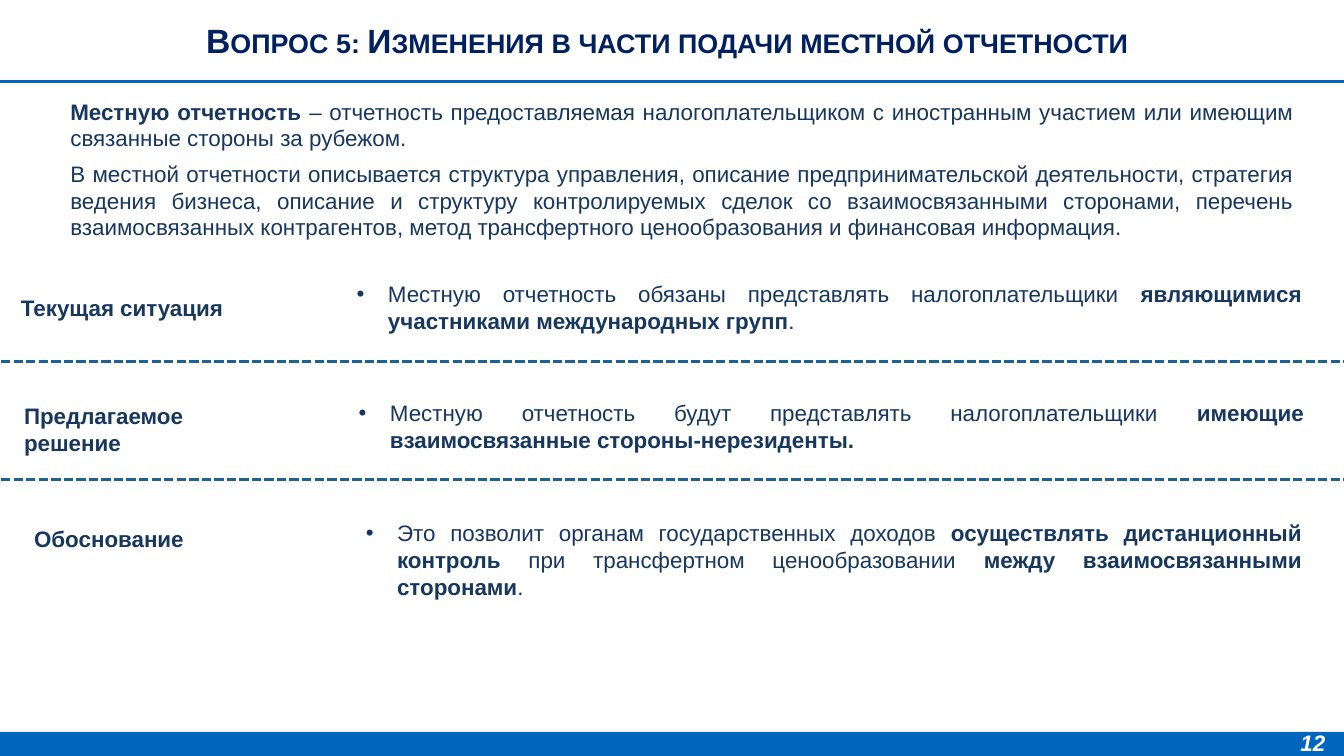
from lxml import etree
from pptx import Presentation
from pptx.dml.color import RGBColor
from pptx.enum.dml import MSO_LINE
from pptx.enum.shapes import MSO_CONNECTOR, MSO_SHAPE
from pptx.enum.text import MSO_ANCHOR, MSO_AUTO_SIZE, PP_ALIGN
from pptx.oxml.ns import qn
from pptx.util import Inches, Pt

BLUE, DASH_BLUE, NAVY, TEXT, WHITE = "0065BD", "1D6294", "002060", "17375E", "FFFFFF"

TITLE = "**Вопрос 5: Изменения в части подачи местной отчетности **"
DEFINITION = [
    "**Местную отчетность **– отчетность предоставляемая налогоплательщиком с иностранным "
    "участием или имеющим связанные стороны за рубежом. ",
    "В местной отчетности описывается структура управления, описание предпринимательской "
    "деятельности, стратегия ведения бизнеса, описание и структуру контролируемых сделок со "
    "взаимосвязанными сторонами, перечень взаимосвязанных контрагентов, метод трансфертного "
    "ценообразования и финансовая информация.",
]
SECTIONS = [
    ("Текущая ситуация", (0.11, 2.87, 2.67, 0.37),
     "Местную отчетность обязаны представлять налогоплательщики** являющимися участниками "
     "международных групп**.", (3.44, 2.73, 9.57, 0.64), 6),
    ("Предлагаемое решение", (0.14, 3.94, 2.67, 0.64),
     "Местную отчетность будут представлять налогоплательщики** имеющие взаимосвязанные "
     "стороны-нерезиденты.**", (3.46, 3.91, 9.57, 0.64), 0),
    ("Обоснование", (0.24, 5.16, 1.96, 0.37),
     "Это позволит органам государственных доходов **осуществлять дистанционный контроль** при "
     "трансфертном ценообразовании **между взаимосвязанными сторонами**.",
     (3.53, 5.1, 9.48, 1.26), 6),
]


def rgb(color):
    """Turn a hex string into a colour."""
    return RGBColor.from_string(color)


def add_bullet(p):
    """Give a paragraph a round bullet with a hanging indent."""
    pPr = p._p.get_or_add_pPr()
    pPr.set("marL", str(Inches(0.31)))
    pPr.set("indent", str(-Inches(0.31)))
    etree.SubElement(pPr, qn("a:buFont")).set("typeface", "Arial")
    etree.SubElement(pPr, qn("a:buChar")).set("char", "•")


def add_text(s, box, paragraphs, size=16, color=TEXT, align=PP_ALIGN.LEFT, before=0,
             anchor=MSO_ANCHOR.TOP, bullet=False, italic=False, small_caps=False):
    """Add a text box in which ** switches bold on and off."""
    tf = s.shapes.add_textbox(*map(Inches, box)).text_frame
    tf.word_wrap = True
    tf.auto_size = MSO_AUTO_SIZE.NONE if small_caps else MSO_AUTO_SIZE.SHAPE_TO_FIT_TEXT
    tf.vertical_anchor = anchor
    for i, text in enumerate(paragraphs):
        p = tf.add_paragraph() if i else tf.paragraphs[0]
        p.alignment, p.space_before = align, Pt(before)
        if bullet:
            add_bullet(p)
        for j, part in enumerate(text.split("**")):
            if not part:
                continue
            r = p.add_run()
            r.text = part
            r.font.name, r.font.size = "Arial", Pt(size)
            r.font.bold, r.font.italic = j % 2 == 1, italic
            r.font.color.rgb = rgb(color)
            if small_caps:
                r._r.get_or_add_rPr().set("cap", "small")


def add_rule(s, x, y, color, dash=None):
    """Draw a horizontal line across the slide."""
    line = s.shapes.add_connector(MSO_CONNECTOR.STRAIGHT, Inches(x), Inches(y),
                                  Inches(x + 13.33), Inches(y))
    line.line.color.rgb = rgb(color)
    line.line.width = Pt(2.25)
    if dash:
        line.line.dash_style = dash
    etree.SubElement(line._element.spPr, qn("a:effectLst"))


def add_bar(s, box, color):
    """Add a plain filled rectangle."""
    sp = s.shapes.add_shape(MSO_SHAPE.RECTANGLE, *map(Inches, box))
    sp.shadow.inherit = False
    sp.fill.solid()
    sp.fill.fore_color.rgb = rgb(color)
    sp.line.fill.background()


def main():
    """Build and save the slide."""
    prs = Presentation()
    prs.slide_width, prs.slide_height = Inches(13.33), Inches(7.5)
    s = prs.slides.add_slide(prs.slide_layouts[6])
    add_bar(s, (0, 7.26, 13.33, 0.24), BLUE)
    add_rule(s, 0, 0.81, BLUE)
    add_text(s, (0.19, 0, 12.93, 0.79), [TITLE], size=24, color=NAVY,
             align=PP_ALIGN.CENTER, anchor=MSO_ANCHOR.MIDDLE, small_caps=True)
    add_text(s, (0.6, 0.92, 12.33, 1.53), DEFINITION, align=PP_ALIGN.JUSTIFY, before=6)
    for label, label_box, body, body_box, before in SECTIONS:
        add_text(s, label_box, [f"**{label}**"], anchor=MSO_ANCHOR.MIDDLE)
        add_text(s, body_box, [body], align=PP_ALIGN.JUSTIFY, before=before, bullet=True)
    for y in (3.59, 4.76):
        add_rule(s, 0.01, y, DASH_BLUE, MSO_LINE.SQUARE_DOT)
    add_text(s, (12.8, 7.18, 0.46, 0.37), ["**12**"], color=WHITE, italic=True)
    prs.save("out.pptx")


if __name__ == "__main__":
    main()
